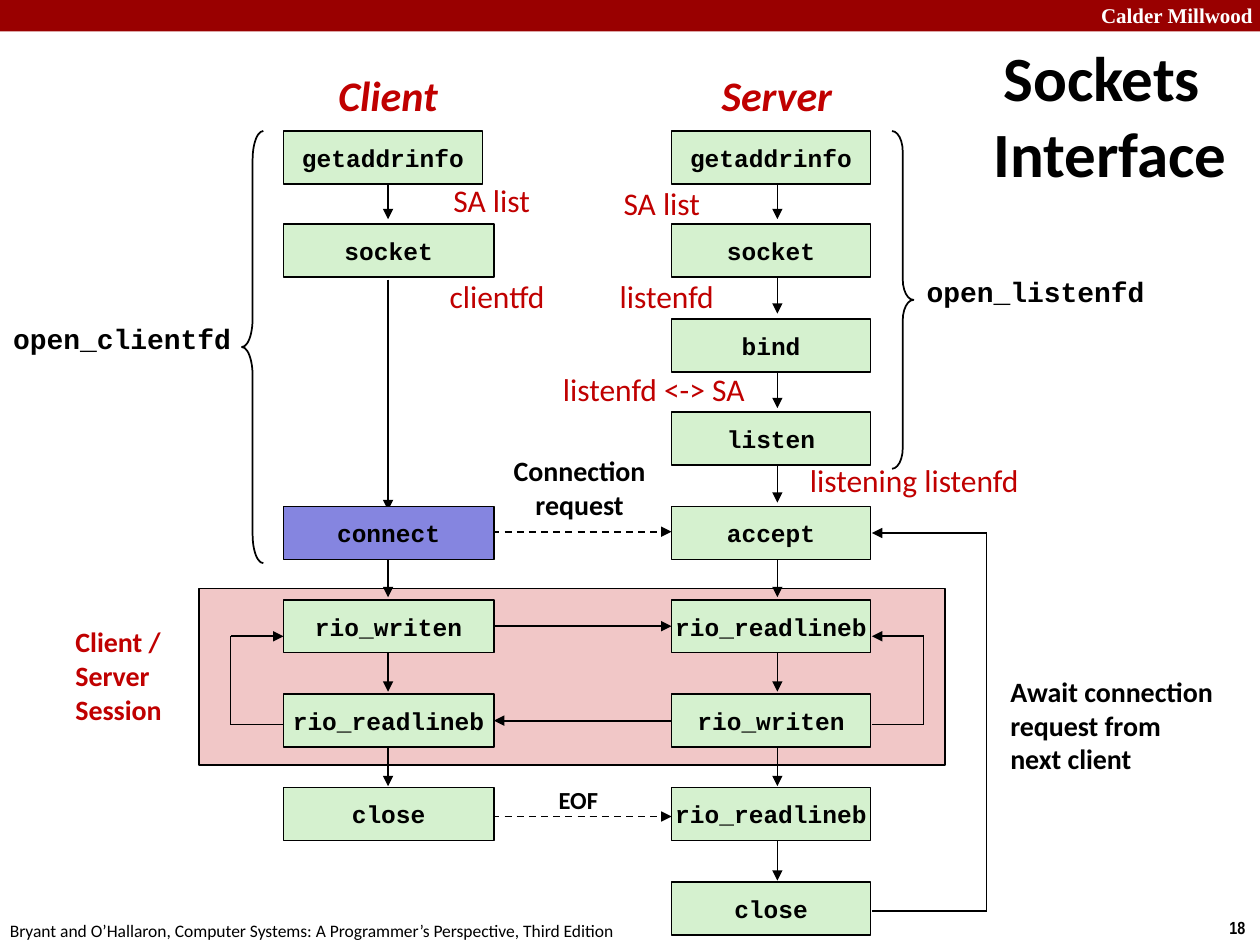
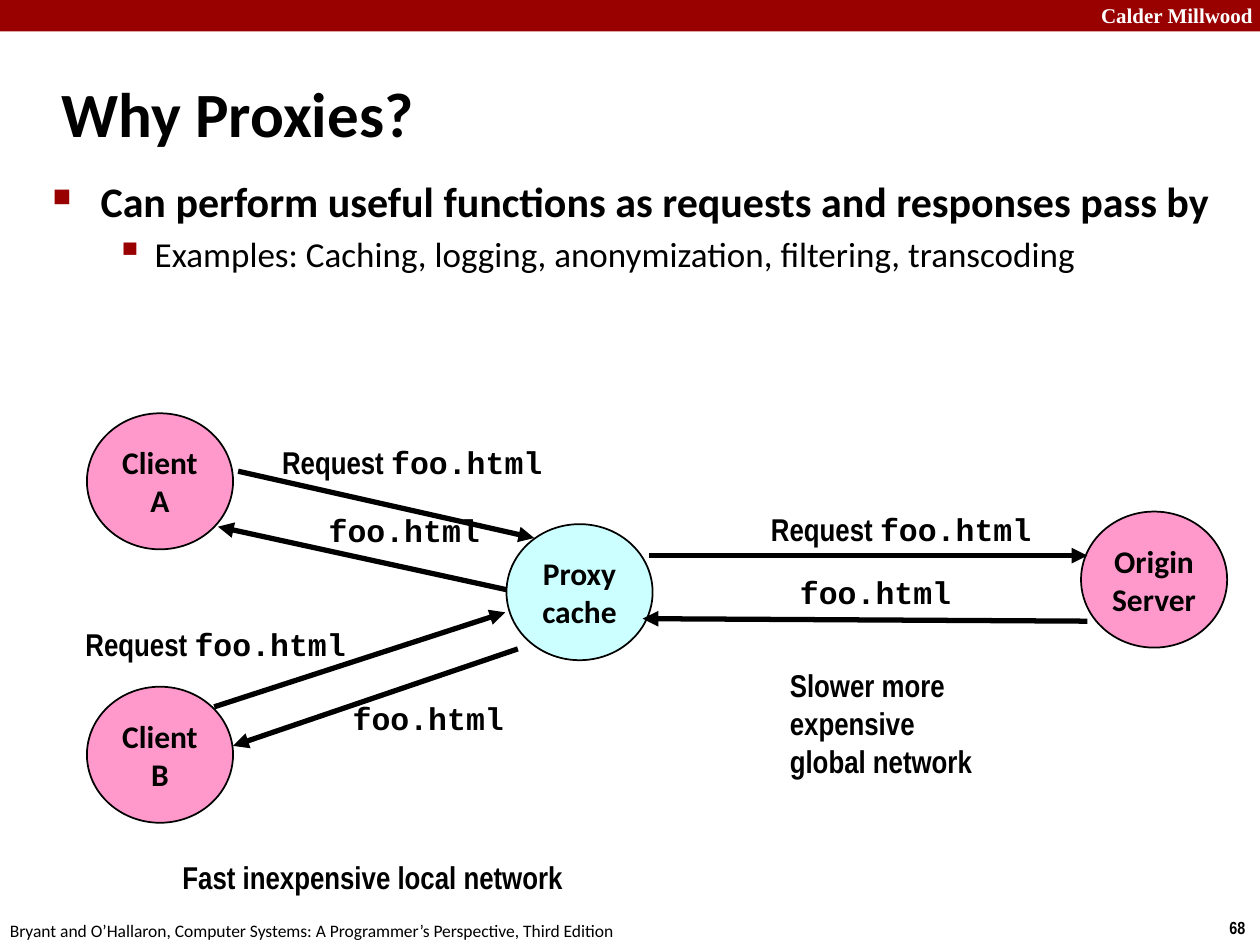
"""Build two lecture slides: the sockets interface flow and the use of web proxies."""
from typing import Any, NamedTuple

from lxml.etree import SubElement
from pptx import Presentation
from pptx.dml.color import RGBColor
from pptx.enum.dml import MSO_LINE
from pptx.enum.shapes import MSO_CONNECTOR as Conn
from pptx.enum.shapes import MSO_SHAPE as Geo
from pptx.enum.text import MSO_ANCHOR as Anchor
from pptx.enum.text import MSO_AUTO_SIZE as Fit
from pptx.enum.text import PP_ALIGN as Align
from pptx.oxml.ns import qn
from pptx.util import Pt

PX = 9144

BLACK, WHITE = "000000", "FFFFFF"
BAND, RED = "990000", "C00000"
GREEN, VIOLET, ROSE = "D5F1CF", "8585E0", "F1C7C7"
PINK, CYAN = "FF99CC", "CCFFFF"

MONO = "Courier New"
TITLE = dict(name="Calibri", size=Pt(36), bold=True)
HEADING = dict(name="Calibri", size=Pt(24), bold=True, italic=True)
BODY = dict(name="Calibri", size=Pt(24), bold=True)
SUB_BODY = dict(name="Calibri", size=Pt(20))
BOLD = dict(name="Calibri", size=Pt(16), bold=True)
SMALL_BOLD = dict(name="Calibri", size=Pt(14), bold=True)
RESULT = dict(name="Calibri", size=Pt(18))
CALL = dict(name=MONO, size=Pt(14), bold=True)
WRAPPER = dict(name=MONO, size=Pt(16), bold=True)
HOST = dict(name="Calibri", size=Pt(18), bold=True)
NARROW = dict(name="Arial Narrow", size=Pt(18), bold=True)
BRAND = dict(name="Times New Roman", size=Pt(12), bold=True)
PAGE = dict(name="Arial Narrow", size=Pt(10), bold=True)
FOOTER = dict(name="Calibri", size=Pt(10))

CLIENT_X, CLIENT_W = 225, 167
SERVER_X, SERVER_W = 533, 158
CLIENT_MID, SERVER_MID = 308, 617
CALL_H = 42


class Box(NamedTuple):
    """Left, top, width and height in px."""
    x: int
    y: int
    w: int
    h: int


class Label(NamedTuple):
    """A piece of free text; backquotes mark code."""
    box: Box
    text: str
    fmt: dict[str, Any]
    color: str = BLACK
    align: Align = Align.LEFT
    anchor: Anchor = Anchor.TOP
    wrap: bool = False
    fit: Fit = Fit.SHAPE_TO_FIT_TEXT
    hang: int = 0


class Node(NamedTuple):
    """A filled shape with centred text."""
    box: Box
    text: str
    fill: str
    fmt: dict[str, Any]
    geo: Geo = Geo.RECTANGLE


class Line(NamedTuple):
    """A straight line between two points."""
    x1: int
    y1: int
    x2: int
    y2: int
    arrow: bool = True
    dash: bool = False
    width: int = 1


class Bullet(NamedTuple):
    """A bulleted paragraph of the body text."""
    text: str
    fmt: dict[str, Any]
    level: int
    margin: int
    hang: int
    char: str
    percent: int
    before: int


def px(value: int) -> int:
    """Turn px into EMU."""
    return value * PX


def rgb(color: str) -> RGBColor:
    """Turn a hex string into a colour."""
    return RGBColor.from_string(color)


def add_run(p: Any, text: str, fmt: dict[str, Any], color: str) -> None:
    """Add one formatted run to a paragraph."""
    r = p.add_run()
    r.text = text
    for key, value in fmt.items():
        setattr(r.font, key, value)
    r.font.color.rgb = rgb(color)


def set_indent(p: Any, margin: int, hang: int) -> Any:
    """Give a paragraph a hanging indent and return its properties."""
    props = p._p.get_or_add_pPr()
    props.set("marL", str(px(margin)))
    props.set("indent", str(-px(hang)))
    return props


def write(sp: Any, label: Label) -> None:
    """Fill a shape with the text of a label."""
    tf = sp.text_frame
    frame = dict(word_wrap=label.wrap, auto_size=label.fit, vertical_anchor=label.anchor)
    for key, value in frame.items():
        setattr(tf, key, value)
    for i, text in enumerate(label.text.split("\n")):
        p = tf.add_paragraph() if i else tf.paragraphs[0]
        p.alignment = label.align
        if label.hang:
            set_indent(p, label.hang, label.hang)
        for j, part in enumerate(text.split("`")):
            if part:
                add_run(p, part, label.fmt | (dict(name=MONO) if j % 2 else {}), label.color)


def add_label(s: Any, label: Label) -> None:
    """Draw a text box."""
    write(s.shapes.add_textbox(*map(px, label.box)), label)


def add_shape(s: Any, geo: Geo, box: Box, fill: str = "", line: str = BLACK) -> Any:
    """Draw a preset shape, with no fill or line for an empty colour."""
    sp = s.shapes.add_shape(geo, *map(px, box))
    sp.shadow.inherit = False
    if fill:
        sp.fill.solid()
        sp.fill.fore_color.rgb = rgb(fill)
    else:
        sp.fill.background()
    if line:
        sp.line.color.rgb = rgb(line)
        sp.line.width = Pt(1)
    else:
        sp.line.fill.background()
    return sp


def add_node(s: Any, node: Node) -> None:
    """Draw a shape with its centred text."""
    sp = add_shape(s, node.geo, node.box, node.fill)
    write(sp, Label(node.box, node.text, node.fmt, align=Align.CENTER,
                    anchor=Anchor.MIDDLE, fit=Fit.NONE))


def add_line(s: Any, line: Line) -> None:
    """Draw a connector, with an arrowhead at its end if asked."""
    c = s.shapes.add_connector(Conn.STRAIGHT, *map(px, line[:4]))
    c.line.color.rgb = rgb(BLACK)
    c.line.width = Pt(line.width)
    if line.dash:
        c.line.dash_style = MSO_LINE.DASH
    props = c.element.spPr
    if line.arrow:
        SubElement(props.find(qn("a:ln")), qn("a:tailEnd"), type="triangle")
    SubElement(props, qn("a:effectLst"))


def add_loop(s: Any, start: int, bend: int, low: int, high: int) -> None:
    """Draw a three-part path that leaves at low and returns at high."""
    add_line(s, Line(start, low, bend, low, arrow=False))
    add_line(s, Line(bend, low, bend, high, arrow=False))
    add_line(s, Line(bend, high, start, high))


def add_brace(s: Any, geo: Geo, box: Box, curl: float) -> None:
    """Draw a curly brace."""
    add_shape(s, geo, box).adjustments[0] = curl


def add_bullets(s: Any, box: Box, bullets: list[Bullet]) -> None:
    """Draw the bulleted body text."""
    tf = s.shapes.add_textbox(*map(px, box)).text_frame
    tf.word_wrap = True
    for i, b in enumerate(bullets):
        p = tf.add_paragraph() if i else tf.paragraphs[0]
        p.level = b.level
        p.space_before = Pt(b.before)
        props = set_indent(p, b.margin, b.hang)
        SubElement(SubElement(props, qn("a:buClr")), qn("a:srgbClr"), val=BAND)
        SubElement(props, qn("a:buSzPct"), val=str(b.percent * 1000))
        SubElement(props, qn("a:buChar"), char=b.char)
        add_run(p, b.text, b.fmt, BLACK)


def new_slide(prs: Any, number: int, title: str, box: Box, align: Align) -> Any:
    """Add a blank slide with the band, footer, page number and title."""
    s = prs.slides.add_slide(prs.slide_layouts[6])
    add_shape(s, Geo.RECTANGLE, Box(0, 0, 1000, 25), BAND, "")
    add_label(s, Label(Box(864, -3, 143, 30), "Calder Millwood", BRAND, WHITE))
    add_label(s, Label(Box(966, 723, 34, 27), str(number), PAGE))
    add_label(s, Label(Box(-2, 725, 508, 27), "Bryant and O’Hallaron, Computer Systems: "
                       "A Programmer’s Perspective, Third Edition", FOOTER))
    add_label(s, Label(box, title, TITLE, align=align, anchor=Anchor.MIDDLE,
                       wrap=True, fit=Fit.NONE, hang=13))
    return s


def row_top(row: int) -> int:
    """Give the top of a row of calls."""
    return 104 + row * 149 // 2


def step_arrow(x: int, row: int) -> Line:
    """Give the arrow from one row of calls to the next."""
    top = 141 + 75 * row
    return Line(x, top, x, top + 33)


def build_sockets(prs: Any) -> None:
    """Draw the client and server calls of the sockets interface."""
    s = new_slide(prs, 18, "Sockets Interface", Box(758, 25, 233, 131), Align.CENTER)
    add_shape(s, Geo.RECTANGLE, Box(158, 467, 592, 140), ROSE)
    for loop in [(692, 733, 575, 505), (225, 183, 575, 505), (692, 783, 723, 423)]:
        add_loop(s, *loop)

    lines = [step_arrow(SERVER_MID, row) for row in range(8)]
    lines += [step_arrow(CLIENT_MID, row) for row in (0, 4, 5, 6)]
    lines += [Line(CLIENT_MID, 222, CLIENT_MID, 405),
              Line(333, 422, 533, 422, dash=True), Line(333, 648, 533, 648, dash=True),
              Line(392, 497, 533, 497), Line(533, 572, 392, 572)]
    for line in lines:
        add_line(s, line)

    client = {0: "getaddrinfo", 1: "socket", 4: "connect", 5: "rio_writen",
              6: "rio_readlineb", 7: "close"}
    server = ["getaddrinfo", "socket", "bind", "listen", "accept", "rio_readlineb",
              "rio_writen", "rio_readlineb", "close"]
    for row, call in client.items():
        width = CLIENT_W if row else SERVER_W
        fill = VIOLET if call == "connect" else GREEN
        add_node(s, Node(Box(CLIENT_X, row_top(row), width, CALL_H), call, fill, CALL))
    for row, call in enumerate(server):
        add_node(s, Node(Box(SERVER_X, row_top(row), SERVER_W, CALL_H), call, GREEN, CALL))

    add_brace(s, Geo.RIGHT_BRACE, Box(708, 104, 17, 268), 0.96)
    add_brace(s, Geo.LEFT_BRACE, Box(192, 104, 17, 343), 1.33)

    for box, text, fmt, color in [
            (Box(258, 50, 100, 50), "Client", HEADING, RED),
            (Box(562, 50, 109, 50), "Server", HEADING, RED),
            (Box(397, 355, 126, 64), "Connection\nrequest", BOLD, BLACK),
            (Box(433, 618, 52, 34), "EOF", SMALL_BOLD, BLACK),
            (Box(725, 213, 194, 37), "open_listenfd", WRAPPER, BLACK),
            (Box(0, 250, 194, 37), "open_clientfd", WRAPPER, BLACK)]:
        add_label(s, Label(box, text, fmt, color, Align.CENTER, Anchor.MIDDLE))
    for box, text, color in [
            (Box(50, 494, 92, 84), "Client / Server\nSession", RED),
            (Box(792, 530, 183, 91), "Await connection\nrequest from\nnext client", BLACK)]:
        add_label(s, Label(box, text, BOLD, color, anchor=Anchor.MIDDLE, wrap=True))
    for x, y, w, text in [
            (633, 361, 192, "listening listenfd"), (350, 139, 81, "SA list"),
            (485, 141, 81, "SA list"), (347, 215, 99, "clientfd"),
            (482, 215, 96, "listenfd"), (437, 289, 166, "listenfd <-> SA")]:
        add_label(s, Label(Box(x, y, w, 40), text, RESULT, RED))


def build_proxies(prs: Any) -> None:
    """Draw clients that reach an origin server through a proxy cache."""
    s = new_slide(prs, 68, "Why Proxies?", Box(39, 48, 830, 83), Align.LEFT)
    add_bullets(s, Box(32, 134, 943, 181), [
        Bullet("Can perform useful functions as requests and responses pass by",
               BODY, 0, 38, 38, "■", 60, 5),
        Bullet("Examples: Caching, logging, anonymization, filtering, transcoding",
               SUB_BODY, 1, 81, 31, "▪", 110, 4)])
    for x, y, text, fill in [(69, 328, "Client\nA", PINK), (402, 416, "Proxy\ncache", CYAN),
                             (858, 406, "Origin\nServer", PINK), (69, 545, "Client\nB", PINK)]:
        add_node(s, Node(Box(x, y, 116, 108), text, fill, HOST, Geo.OVAL))
    for ends in [(189, 374, 424, 427), (515, 441, 863, 441), (863, 493, 510, 491),
                 (402, 468, 173, 418), (170, 561, 401, 486), (411, 515, 185, 592)]:
        add_line(s, Line(*ends, width=3))
    for x, y in [(214, 347), (602, 400), (58, 491)]:
        add_label(s, Label(Box(x, y, 228, 40), "Request `foo.html`", NARROW))
    for x, y in [(625, 450), (251, 401), (270, 550)]:
        add_label(s, Label(Box(x, y, 141, 40), "`foo.html`", NARROW))
    add_label(s, Label(Box(135, 676, 326, 40), "Fast inexpensive local network", NARROW))
    add_label(s, Label(Box(617, 524, 185, 101), "Slower more\nexpensive\nglobal network",
                       NARROW, wrap=True))


def main() -> None:
    """Build and save the presentation."""
    prs = Presentation()
    prs.slide_width, prs.slide_height = px(1000), px(750)
    build_sockets(prs)
    build_proxies(prs)
    prs.save("out.pptx")


if __name__ == "__main__":
    main()
